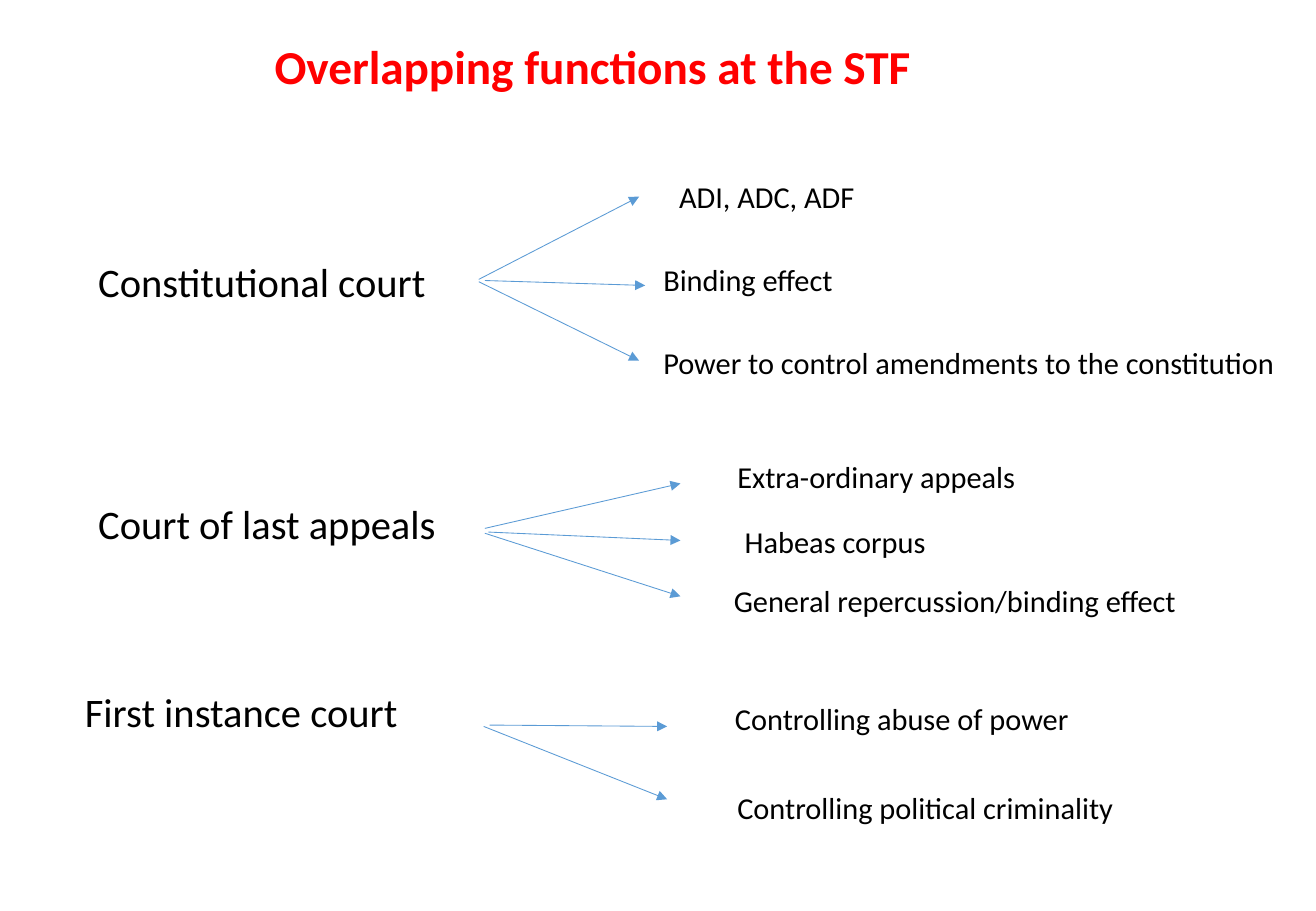
import dataclasses
import typing

import lxml.etree
import pptx
import pptx.dml.color
import pptx.enum.shapes
import pptx.enum.text
import pptx.oxml.ns
import pptx.slide
import pptx.util


@dataclasses.dataclass(frozen=True)
class Theme:
    font: str = "Calibri"
    title_color: str = "FF0000"
    text_color: str = "000000"
    arrow_color: str = "5B9BD5"
    title_size: float = 28
    court_size: float = 24
    function_size: float = 18
    arrow_width: float = 0.5


class Label(typing.NamedTuple):
    text: str
    left: float
    top: float
    width: float
    wrap: bool = False


class Arrow(typing.NamedTuple):
    start_x: float
    start_y: float
    end_x: float
    end_y: float


class Function(typing.NamedTuple):
    label: Label
    arrow: Arrow


class Court(typing.NamedTuple):
    label: Label
    functions: tuple[Function, ...]


THEME = Theme()
TITLE = Label("Overlapping functions at the STF", 0, 18.7, 702, True)
COURTS = (
    Court(
        Label("Constitutional court", 51.1, 149, 295.2, True),
        (
            Function(Label("ADI, ADC, ADF", 395.3, 102.2, 119.5), Arrow(283.7, 165.6, 378.7, 116.6)),
            Function(Label("Binding effect", 385.9, 151.2, 116.6), Arrow(287.3, 166.3, 382.3, 169.2)),
            Function(
                Label("Power to control amendments to the constitution", 385.9, 200.2, 380.9),
                Arrow(283.7, 167, 378.7, 213.8),
            ),
        ),
    ),
    Court(
        Label("Court of last appeals", 51.1, 292.3, 221.8),
        (
            Function(Label("Extra-ordinary appeals", 429.8, 267.8, 180), Arrow(287.3, 313.2, 403.2, 286.6)),
            Function(Label("Habeas corpus", 434.2, 306.7, 149, True), Arrow(289.4, 315.4, 403.2, 320.4)),
            Function(
                Label("General repercussion/binding effect", 427.7, 341.3, 286.6),
                Arrow(287.3, 316.1, 403.2, 353.5),
            ),
        ),
    ),
    Court(
        Label("First instance court", 43.2, 403.9, 201.6),
        (
            Function(Label("Controlling abuse of power", 428.4, 411.8, 219.6), Arrow(290.2, 429.8, 395.3, 430.6)),
            Function(
                Label("Controlling political criminality", 429.8, 464.4, 244.1),
                Arrow(286.6, 430.6, 395.3, 473.8),
            ),
        ),
    ),
)


def add_label(
    slide: pptx.slide.Slide,
    label: Label,
    *,
    size: float,
    color: str = THEME.text_color,
    bold: bool = False,
    centered: bool = False,
) -> None:
    height = size * 1.2 + 7.2
    box = slide.shapes.add_textbox(*map(pptx.util.Pt, (label.left, label.top, label.width, height)))
    frame = box.text_frame
    frame.word_wrap = label.wrap
    frame.auto_size = pptx.enum.text.MSO_AUTO_SIZE.SHAPE_TO_FIT_TEXT
    paragraph = frame.paragraphs[0]
    alignments = pptx.enum.text.PP_ALIGN
    paragraph.alignment = alignments.CENTER if centered else alignments.LEFT
    run = paragraph.add_run()
    run.text = label.text
    run.font.name = THEME.font
    run.font.size = pptx.util.Pt(size)
    run.font.bold = bold
    run.font.color.rgb = pptx.dml.color.RGBColor.from_string(color)


def add_arrow(slide: pptx.slide.Slide, arrow: Arrow) -> None:
    connector = slide.shapes.add_connector(
        pptx.enum.shapes.MSO_CONNECTOR.STRAIGHT, *map(pptx.util.Pt, arrow)
    )
    connector.line.width = pptx.util.Pt(THEME.arrow_width)
    connector.line.color.rgb = pptx.dml.color.RGBColor.from_string(THEME.arrow_color)
    qn = pptx.oxml.ns.qn
    properties = connector._element.spPr
    lxml.etree.SubElement(properties.find(qn("a:ln")), qn("a:tailEnd"), type="triangle")
    lxml.etree.SubElement(properties, qn("a:effectLst"))


def main() -> None:
    presentation = pptx.Presentation()
    presentation.slide_width = pptx.util.Pt(779.76)
    presentation.slide_height = pptx.util.Pt(540)
    slide = presentation.slides.add_slide(presentation.slide_layouts[6])

    add_label(slide, TITLE, size=THEME.title_size, color=THEME.title_color, bold=True, centered=True)
    for court in COURTS:
        add_label(slide, court.label, size=THEME.court_size)
        for function in court.functions:
            add_arrow(slide, function.arrow)
            add_label(slide, function.label, size=THEME.function_size)

    presentation.save("out.pptx")


if __name__ == "__main__":
    main()
